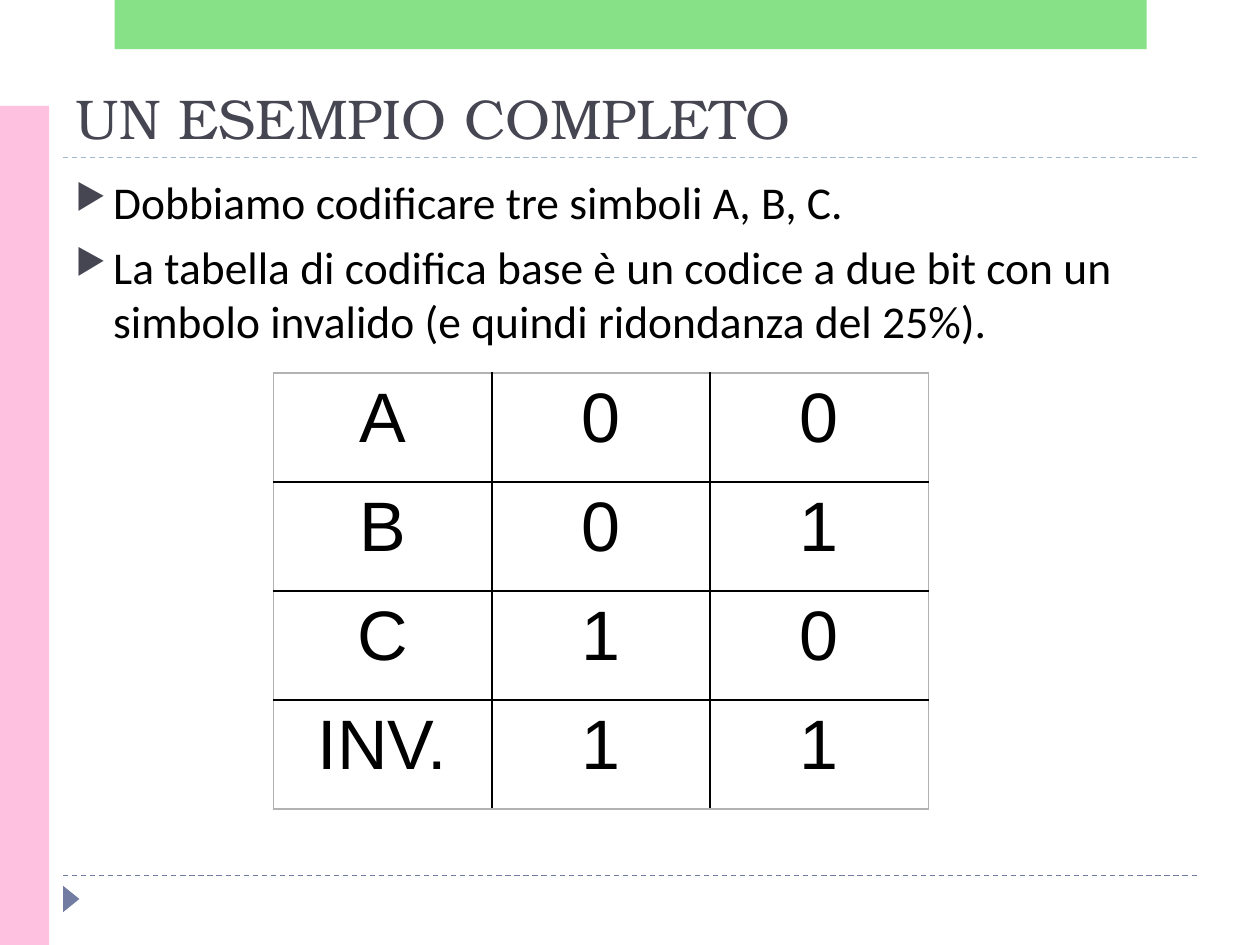
"""Build the slide "Un esempio completo" with its code table."""
from lxml.etree import SubElement as Sub
from pptx import Presentation
from pptx.dml.color import RGBColor
from pptx.enum.dml import MSO_LINE as Dash
from pptx.enum.shapes import MSO_CONNECTOR as Link, MSO_SHAPE as Kind
from pptx.enum.text import MSO_ANCHOR as Anchor, PP_ALIGN as Align
from pptx.oxml.ns import qn
from pptx.util import Inches, Pt

BLACK = RGBColor(0x00, 0x00, 0x00)
GREY = RGBColor(0xB2, 0xB2, 0xB2)
SLATE = RGBColor(0x46, 0x46, 0x53)
BLUE = RGBColor(0x72, 0x7C, 0xA3)
PALE = RGBColor(0x9F, 0xB8, 0xCD)
PINK = RGBColor(0xFF, 0xC1, 0xE0)
GREEN = RGBColor(0x62, 0xD8, 0x62)

deck = Presentation()
deck.slide_width, deck.slide_height = Inches(10), Inches(7.5)
unit = deck.slide_width // 10
slide = deck.slides.add_slide(deck.slide_layouts[5])
shapes = slide.shapes


def grid(*steps):
    return [round(step * unit) for step in steps]


def write(para, text, size=26, font="Calibri", color=BLACK, align=Align.LEFT):
    para.alignment = align
    run = para.add_run()
    run.text = text
    run.font.size, run.font.name = Pt(size), font
    run.font.bold = False
    run.font.color.rgb = color


for y, color in [(6.95, BLUE), (1.25, PALE)]:
    rule = shapes.add_connector(Link.STRAIGHT, *grid(0.5, y, 9.5, y))
    rule.line.color.rgb, rule.line.width = color, Pt(0.75)
    rule.line.dash_style = Dash.DASH
    Sub(rule._element.spPr, qn("a:effectLst"))

for kind, area, color, turn, alpha in [
    (Kind.ISOSCELES_TRIANGLE, (0.46, 7.07, 0.21, 0.13), BLUE, 90, 100),
    (Kind.RECTANGLE, (0, 0.84, 0.39, 6.66), PINK, 0, 100),
    (Kind.RECTANGLE, (0.91, 0, 8.19, 0.39), GREEN, 0, 76),
]:
    mark = shapes.add_shape(kind, *grid(*area))
    mark.shadow.inherit = False
    mark.rotation = turn
    mark.fill.solid()
    mark.fill.fore_color.rgb = color
    mark.line.fill.background()
    if alpha < 100:
        tint = mark._element.spPr.find(".//" + qn("a:srgbClr"))
        Sub(tint, qn("a:alpha"), val=str(alpha * 1000))

title = shapes.title
title.left, title.top, title.width, title.height = grid(0.5, 0.55, 9, 0.7)
title.text_frame.vertical_anchor = Anchor.BOTTOM
write(title.text_frame.paragraphs[0], "UN ESEMPIO COMPLETO",
      size=32, font="TeX Gyre Bonum", color=SLATE)

body = shapes.add_textbox(*grid(0.5, 1.33, 9, 5.4)).text_frame
body.word_wrap = True
points = [
    "Dobbiamo codificare tre simboli A, B, C.",
    "La tabella di codifica base è un codice a due bit con un simbolo "
    "invalido (e quindi ridondanza del 25%).",
]
for i, text in enumerate(points):
    para = body.add_paragraph() if i else body.paragraphs[0]
    para.space_before = Pt(6 if i else 0)
    props = para._p.get_or_add_pPr()
    props.set("marL", str(Inches(0.3)))
    props.set("indent", str(Inches(-0.3)))
    Sub(Sub(props, qn("a:buClr")), qn("a:srgbClr"), val=str(SLATE))
    Sub(props, qn("a:buSzPct"), val="76000")
    Sub(props, qn("a:buChar"), char="▶")
    write(para, text)

codes = [("A", "0", "0"), ("B", "0", "1"), ("C", "1", "0"), ("INV.", "1", "1")]
rows, cols = len(codes), len(codes[0])
table = shapes.add_table(rows, cols, *grid(2.17, 2.96, 5.2, 3.46)).table
table.first_row = table.horz_banding = False
for r, code in enumerate(codes):
    for c, text in enumerate(code):
        cell = table.cell(r, c)
        write(cell.text_frame.paragraphs[0], text,
              size=40, font="Arial", align=Align.CENTER)
        props = cell._tc.get_or_add_tcPr()
        outer = {"lnL": c == 0, "lnR": c == cols - 1,
                 "lnT": r == 0, "lnB": r == rows - 1}
        for side, edge in outer.items():
            line = Sub(props, qn("a:" + side), w=str(Pt(1)))
            fill = Sub(line, qn("a:solidFill"))
            Sub(fill, qn("a:srgbClr"), val=str(GREY if edge else BLACK))
        cell.fill.background()

deck.save("out.pptx")
